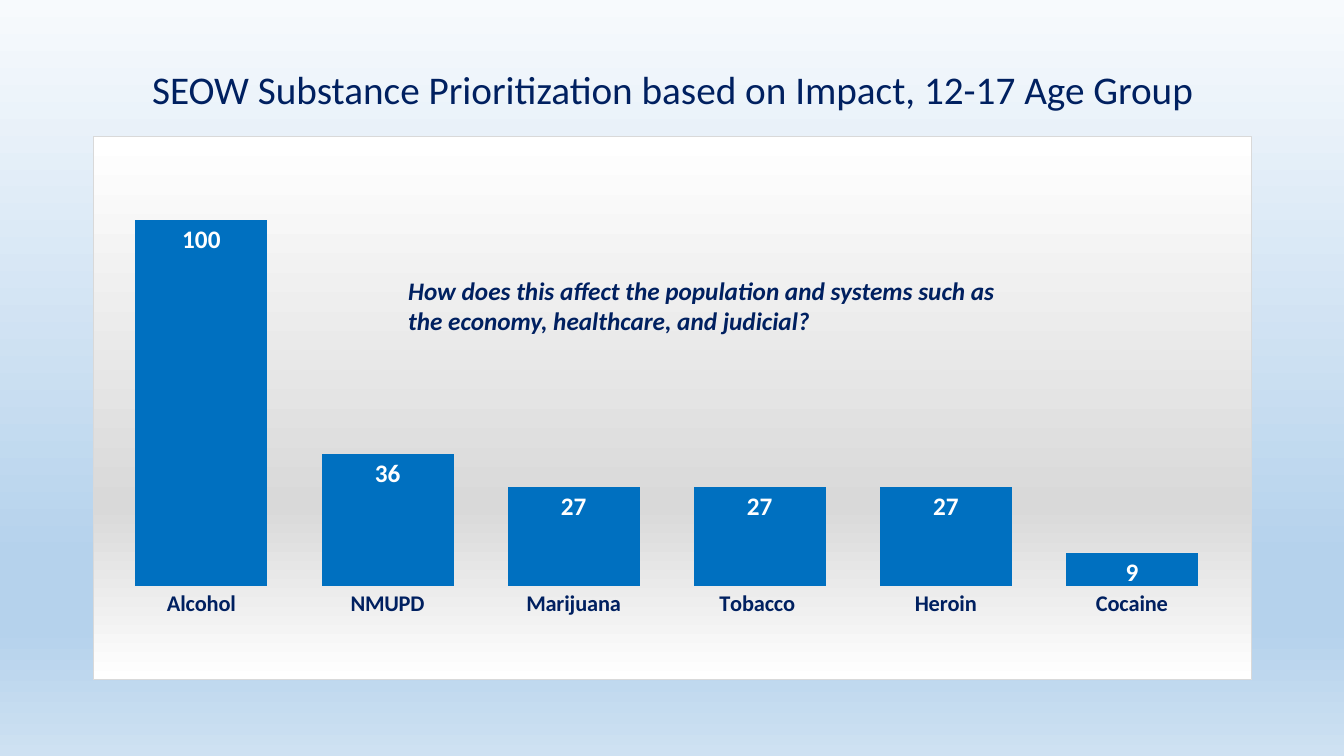
from lxml.etree import fromstring
from pptx import Presentation
from pptx.chart.data import CategoryChartData
from pptx.dml.color import RGBColor
from pptx.enum.chart import XL_CHART_TYPE, XL_LABEL_POSITION, XL_TICK_MARK
from pptx.enum.text import MSO_AUTO_SIZE, PP_ALIGN
from pptx.oxml.ns import nsdecls, qn
from pptx.util import Inches, Pt

NAVY = RGBColor(0x00, 0x20, 0x60)
BLUE = RGBColor(0x00, 0x70, 0xC0)
WHITE = RGBColor(0xFF, 0xFF, 0xFF)
BLACK = RGBColor(0x00, 0x00, 0x00)
GREY = RGBColor(0xD9, 0xD9, 0xD9)
ICE = RGBColor(0xF7, 0xFA, 0xFD)
SKY = RGBColor(0xB5, 0xD2, 0xEC)
MIST = RGBColor(0xCE, 0xE1, 0xF2)
FONT = "Calibri"

SCORES = {"Alcohol": 100, "NMUPD": 36, "Marijuana": 27,
          "Tobacco ": 27, "Heroin": 27, "Cocaine": 9}


def style(font, size, color, bold=False, italic=False):
    """Set the face, size, colour and weight of a font."""
    font.name, font.size = FONT, Pt(size)
    font.bold, font.italic = bold, italic
    font.color.rgb = color


def blend(stops):
    """Return XML for a top-to-bottom gradient of (percent, colour) stops."""
    marks = "".join(
        f'<a:gs pos="{pos * 1000}"><a:srgbClr val="{color}"/></a:gs>'
        for pos, color in stops)
    return (f'<a:gradFill {nsdecls("a")} rotWithShape="1"><a:gsLst>{marks}</a:gsLst>'
            '<a:lin ang="5400000" scaled="0"/></a:gradFill>')


def add_back(slide, stops):
    """Fill the slide background with a gradient."""
    slide.background.fill.gradient()
    fill = slide.element.find(".//" + qn("a:gradFill"))
    fill.getparent().replace(fill, fromstring(blend(stops)))


def add_text(slide, box, text, size, align=PP_ALIGN.LEFT, **looks):
    """Place one wrapped navy paragraph in a box."""
    frame = slide.shapes.add_textbox(*map(Inches, box)).text_frame
    frame.word_wrap = True
    frame.auto_size = MSO_AUTO_SIZE.SHAPE_TO_FIT_TEXT
    para = frame.paragraphs[0]
    para.text, para.alignment = text, align
    style(para.font, size, NAVY, **looks)


def add_panel(chart, stops):
    """Give the chart area a gradient fill and a thin grey border."""
    panel = fromstring(
        f'<c:spPr {nsdecls("c", "a")}>{blend(stops)}<a:ln w="{Pt(0.75)}"><a:solidFill>'
        f'<a:srgbClr val="{GREY}"/></a:solidFill></a:ln></c:spPr>')
    chart.element.find(qn("c:chart")).addnext(panel)


def set_plot(chart, **frame):
    """Fix the inner plot area as fractions of the chart."""
    area = chart.element.find(".//" + qn("c:plotArea"))
    for old in area.findall(qn("c:layout")):
        area.remove(old)
    modes = '<c:xMode val="edge"/><c:yMode val="edge"/>'
    sides = "".join(f'<c:{key} val="{val}"/>' for key, val in frame.items())
    area.insert(0, fromstring(
        f'<c:layout {nsdecls("c")}><c:manualLayout><c:layoutTarget val="inner"/>'
        f'{modes}{sides}</c:manualLayout></c:layout>'))


def add_bars(slide, box, scores):
    """Draw the substance scores as columns in a box."""
    data = CategoryChartData()
    data.categories = list(scores)
    data.add_series("Series 1", list(scores.values()))
    chart = slide.shapes.add_chart(
        XL_CHART_TYPE.COLUMN_CLUSTERED, *map(Inches, box), data).chart
    chart.has_title = chart.has_legend = False
    style(chart.font, 10, BLACK)

    names = chart.category_axis
    names.major_tick_mark = names.minor_tick_mark = XL_TICK_MARK.NONE
    names.format.line.fill.background()
    style(names.tick_labels.font, 16, NAVY, bold=True)

    scale = chart.value_axis
    scale.minimum_scale, scale.maximum_scale = 0, 120
    scale.has_major_gridlines = scale.visible = False

    plot = chart.plots[0]
    plot.gap_width, plot.vary_by_categories = 41, False
    bars = plot.series[0]
    bars.format.fill.solid()
    bars.format.fill.fore_color.rgb = BLUE
    labels = bars.data_labels
    labels.show_value = True
    labels.position = XL_LABEL_POSITION.INSIDE_END
    style(labels.font, 18, WHITE, bold=True)

    add_panel(chart, [(0, WHITE), (68, GREY), (100, WHITE)])
    set_plot(chart, x=0.013, y=0.019, w=0.964, h=0.809)


def add_impact(deck, box):
    """Build the impact slide around its chart box."""
    left, top, width, height = box
    slide = deck.slides.add_slide(deck.slide_layouts[6])
    add_back(slide, [(0, ICE), (74, SKY), (83, SKY), (100, MIST)])
    add_bars(slide, box, SCORES)
    add_text(slide, (left, top - 0.75, width, 0.57),
             "SEOW Substance Prioritization based on Impact, 12-17 Age Group",
             28, PP_ALIGN.CENTER)
    add_text(slide, (left + 3.03, top + 1.33, 6.28, 0.71),
             "How does this affect the population and systems such as "
             "the economy, healthcare, and judicial?",
             18, bold=True, italic=True)


def main():
    """Make the deck and save it."""
    deck = Presentation()
    deck.slide_width, deck.slide_height = Inches(13.33), Inches(7.5)
    add_impact(deck, (0.92, 1.35, 11.5, 5.4))
    deck.save("out.pptx")


if __name__ == "__main__":
    main()
